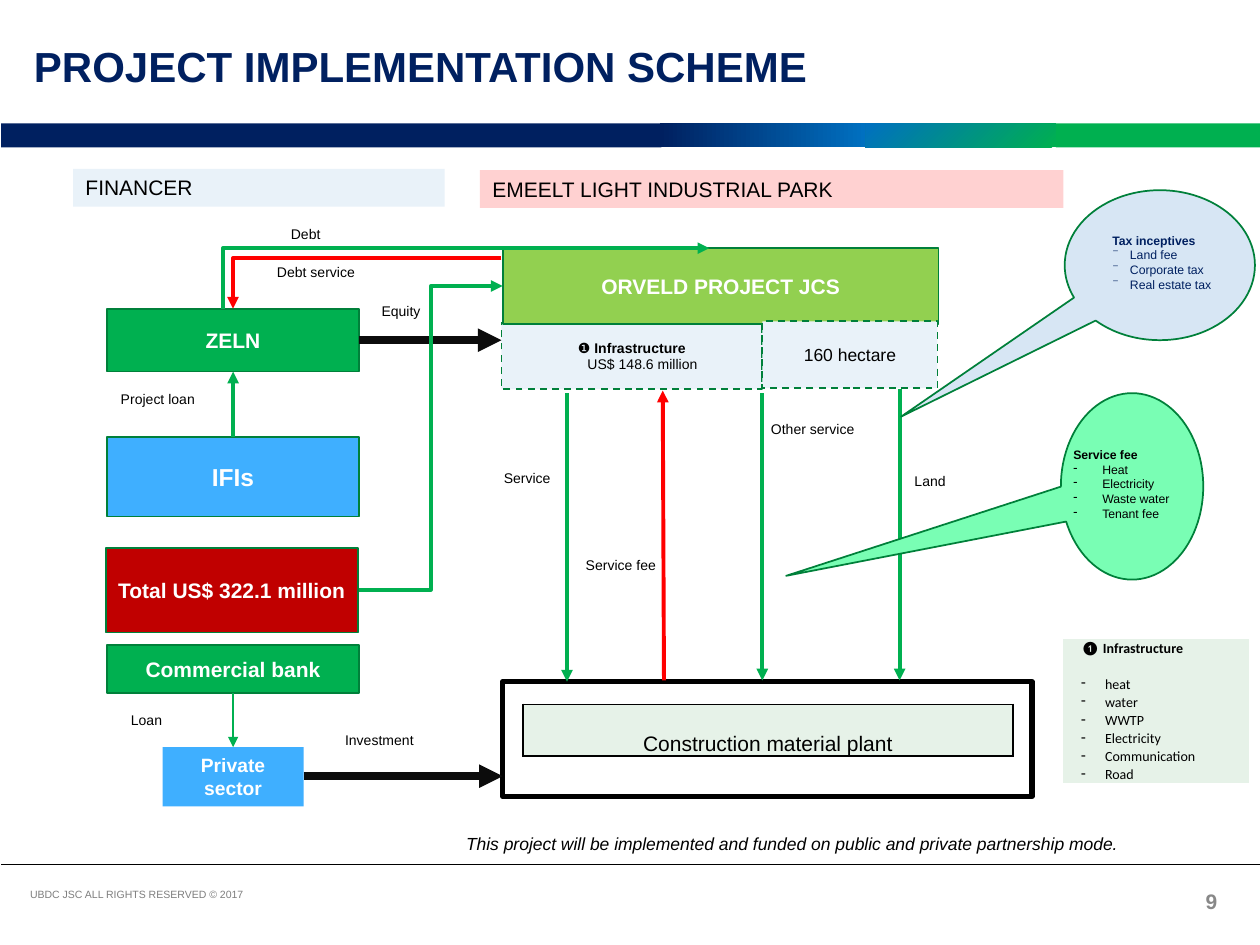
from lxml import etree
from pptx import Presentation
from pptx.dml.color import RGBColor
from pptx.enum.dml import MSO_LINE
from pptx.enum.shapes import MSO_CONNECTOR as LINK, MSO_SHAPE as FORM
from pptx.enum.text import MSO_ANCHOR as ANCHOR, PP_ALIGN as ALIGN
from pptx.oxml.ns import qn
from pptx.util import Inches, Pt

# The slide is a grid of 100 columns by 75 rows; all lengths count its cells.
COLUMNS, ROWS = 100, 75
CELL = Inches(10) / COLUMNS
NAVY, BLUE, GREEN, EDGE = "002060", "0070C0", "00B050", "00803A"
SKY, PALE, MINT, RED = "3FAFFF", "E9F2F9", "E6F2E8", "FF0000"
BLACK, WHITE, COAL = "000000", "FFFFFF", "0C0C0C"
NO_TABLE_STYLE = "{2D5ABB26-0587-4C30-8999-92F81FD0307C}"


def grid(*cells):
    return [round(cell * CELL) for cell in cells]


def color(value):
    return RGBColor.from_string(value)


def add_run(paragraph, text, size, ink=BLACK, bold=False, italic=False, font="Arial"):
    run = paragraph.add_run()
    run.text = text
    run.font.name, run.font.size = font, Pt(size)
    run.font.bold, run.font.italic = bold, italic
    run.font.color.rgb = color(ink)


def indent(paragraph, left, hanging=0):
    properties = paragraph._p.get_or_add_pPr()
    left, hanging = grid(left, hanging)
    properties.set("marL", str(left))
    properties.set("indent", str(-hanging))
    return properties


def add_bullet(paragraph, mark, width, ink):
    properties = indent(paragraph, width, width)
    bullet_color = etree.SubElement(properties, qn("a:buClr"))
    etree.SubElement(bullet_color, qn("a:srgbClr")).set("val", ink)
    etree.SubElement(properties, qn("a:buChar")).set("char", mark)


def write(shape, text, size, ink=BLACK, align=ALIGN.LEFT, anchor=ANCHOR.TOP, **style):
    frame = shape.text_frame
    frame.word_wrap, frame.vertical_anchor = True, anchor
    paragraph = frame.paragraphs[0]
    paragraph.alignment = align
    add_run(paragraph, text, size, ink, **style)
    return frame


def add_box(slide, place, fill=None, edge=None, weight=1, dash=False, form=FORM.RECTANGLE):
    shape = slide.shapes.add_shape(form, *grid(*place))
    shape.shadow.inherit = False
    if fill:
        shape.fill.solid()
        shape.fill.fore_color.rgb = color(fill)
    else:
        shape.fill.background()
    if edge:
        shape.line.color.rgb = color(edge)
        shape.line.width = Pt(weight)
        if dash:
            shape.line.dash_style = MSO_LINE.DASH
    else:
        shape.line.fill.background()
    return shape


def add_party(slide, place, text, size, fill, edge=EDGE, anchor=ANCHOR.MIDDLE, form=FORM.RECTANGLE):
    shape = add_box(slide, place, fill, edge, form=form)
    write(shape, text, size, WHITE, ALIGN.CENTER, anchor, bold=True)


def add_gradient(slide, place, first, last, radial=False):
    shape = add_box(slide, place)
    shape.fill.gradient()
    shape.fill.gradient_angle = 0
    for stop, value, position in zip(shape.fill.gradient_stops, (first, last), (0, 1)):
        stop.color.rgb, stop.position = color(value), position
    if radial:
        linear = shape._element.spPr.find(".//" + qn("a:lin"))
        circle = etree.Element(qn("a:path"), {"path": "circle"})
        etree.SubElement(circle, qn("a:fillToRect"), {"r": "100000", "b": "100000"})
        linear.getparent().replace(linear, circle)


def add_text(slide, place, text, size, ink=BLACK, **style):
    return write(slide.shapes.add_textbox(*grid(*place)), text, size, ink, **style)


def add_bullet_list(slide, place, heading, items, mark, width, ink):
    frame = add_text(slide, place, heading, 7, ink, bold=True)
    for item in items:
        paragraph = frame.add_paragraph()
        add_bullet(paragraph, mark, width, ink)
        add_run(paragraph, item, 7, ink)


def add_link(slide, start, end, ink, weight=2.25, kind=LINK.STRAIGHT, bend=None, head=True):
    """Bend is the share of the width where an elbow turns; 1 makes a single corner."""
    link = slide.shapes.add_connector(kind, *grid(*start, *end))
    link.line.color.rgb, link.line.width = color(ink), Pt(weight)
    properties = link._element.spPr
    etree.SubElement(properties, qn("a:effectLst"))
    if head:
        etree.SubElement(link.line._get_or_add_ln(), qn("a:tailEnd")).set("type", "triangle")
    if bend is not None:
        geometry = properties.find(qn("a:prstGeom"))
        if bend == 1:
            geometry.set("prst", "bentConnector2")
        else:
            guides = geometry.find(qn("a:avLst"))
            if guides is None:
                guides = etree.SubElement(geometry, qn("a:avLst"))
            etree.SubElement(guides, qn("a:gd"), {"name": "adj1", "fmla": f"val {round(bend * 100000)}"})


def add_callout(slide, place, fill, tip):
    shape = add_box(slide, place, fill, EDGE, form=FORM.OVAL_CALLOUT)
    shape.adjustments[0], shape.adjustments[1] = tip


def add_column_table(slide, place, count):
    """Add a one-column table and return its cells."""
    frame = slide.shapes.add_table(count, 1, *grid(*place))
    table = frame.table
    table.first_row = table.horz_banding = False
    table._tbl.tblPr.find(qn("a:tableStyleId")).text = NO_TABLE_STYLE
    cells = list(table.iter_cells())
    for cell in cells:
        cell.fill.solid()
        cell.fill.fore_color.rgb = color(MINT)
        cell.vertical_anchor = ANCHOR.BOTTOM
        cell.margin_left, cell.margin_top, cell.margin_right, cell.margin_bottom = grid(0.1, 0.1, 0.1, 0)
    return cells


def add_border(cell, ink):
    properties = cell._tc.get_or_add_tcPr()
    for index, side in enumerate(("lnL", "lnR", "lnT", "lnB")):
        line = etree.Element(qn("a:" + side), {"w": str(Pt(1))})
        fill = etree.SubElement(line, qn("a:solidFill"))
        etree.SubElement(fill, qn("a:srgbClr")).set("val", ink)
        properties.insert(index, line)


def add_frame(slide):
    add_gradient(slide, (52.4, 9.8, 16.3, 1.9), NAVY, BLUE)
    add_box(slide, (0.1, 9.8, 52.4, 1.9), NAVY)
    add_box(slide, (83.8, 9.8, 16.2, 1.9), GREEN)
    add_gradient(slide, (68.7, 9.8, 15.1, 1.9), BLUE, GREEN, radial=True)
    add_link(slide, (0.1, 68.6), (COLUMNS, 68.6), BLACK, 0.75, head=False)
    add_text(slide, (1.4, 70, 45.9, 2), "UBDC JSC ALL RIGHTS RESERVED © 2017", 6, "7F7F7F")
    title = add_text(slide, (2.7, 3.2, 90, 4), "PROJECT IMPLEMENTATION SCHEME", 24, NAVY, bold=True)
    title.margin_left = title.margin_top = title.margin_right = title.margin_bottom = 0
    add_text(slide, (75.1, 69.5, 22.5, 4), "9", 12, "888888", align=ALIGN.RIGHT,
             anchor=ANCHOR.MIDDLE, bold=True)
    add_text(slide, (36, 65.6, 59.5, 2.8), "This project will be implemented and funded on "
             "public and private partnership mode.", 10, italic=True)


def add_parties(slide):
    write(add_box(slide, (5.8, 13.4, 29.5, 3)), "FINANCER", 12)
    slide.shapes[-1].fill.solid()
    slide.shapes[-1].fill.fore_color.rgb = color(PALE)
    park = add_box(slide, (38.1, 13.5, 46.3, 3), RED)
    tint = park._element.spPr.find(".//" + qn("a:srgbClr"))
    etree.SubElement(tint, qn("a:alpha")).set("val", "18000")
    write(park, "EMEELT LIGHT INDUSTRIAL PARK", 12)

    infrastructure = add_box(slide, (39.8, 25.6, 20.7, 5.3), PALE, EDGE, dash=True)
    frame = write(infrastructure, "❶ ", 8, align=ALIGN.CENTER, anchor=ANCHOR.MIDDLE)
    add_run(frame.paragraphs[0], "Infrastructure", 8, bold=True)
    amount = frame.add_paragraph()
    amount.alignment = ALIGN.CENTER
    indent(amount, 1.7)
    add_run(amount, "US$ 148.6 million", 8)

    add_party(slide, (8.5, 24.5, 20, 5), "ZELN", 12, GREEN)
    add_party(slide, (39.9, 19.7, 34.6, 6), "ORVELD PROJECT JCS", 12, "92D050")
    area = add_box(slide, (60.5, 25.5, 13.9, 5.3), PALE, EDGE, dash=True)
    write(area, "160 hectare", 10, align=ALIGN.CENTER, anchor=ANCHOR.MIDDLE)
    add_party(slide, (8.5, 34.7, 20, 6.3), "IFIs", 14, SKY)
    add_party(slide, (8.4, 43.5, 20, 6.7), "Total US$ 322.1 million", 12, "C00000")
    add_party(slide, (8.5, 51.2, 20, 3.8), "Commercial bank", 12, GREEN, form=FORM.FLOWCHART_PROCESS)
    add_party(slide, (12.9, 59.3, 11.2, 4.7), "Private sector", 11, SKY, None, ANCHOR.TOP)

    plant, = add_column_table(slide, (41.5, 55.9, 38.9, 4.1), 1)
    add_border(plant, BLACK)
    plant.text_frame.paragraphs[0].alignment = ALIGN.CENTER
    add_run(plant.text_frame.paragraphs[0], "Construction material plant", 12)
    add_box(slide, (39.9, 54.1, 42, 9.1), None, BLACK, 3, form=FORM.FLOWCHART_PROCESS)


def add_flows(slide):
    for start, end, ink, weight in (
            ((18.5, 34.7), (18.5, 29.5), GREEN, 2.25), ((52.7, 54), (52.6, 31), RED, 2.25),
            ((24.1, 61.6), (39.9, 61.6), COAL, 4.5), ((28.5, 27), (39.8, 27), COAL, 4.5),
            ((45, 31.2), (45, 54.1), GREEN, 2.25), ((60.5, 31.2), (60.5, 54), GREEN, 2.25),
            ((71.4, 30.9), (71.4, 54), GREEN, 2.25), ((18.5, 55), (18.5, 59.3), GREEN, 0.75)):
        add_link(slide, start, end, ink, weight)
    for start, end, ink, bend in (
            ((17.7, 24.5), (56.3, 19.7), GREEN, 0), ((28.5, 46.8), (39.9, 22.7), GREEN, 0.5),
            ((39.8, 20.5), (18.5, 24.5), RED, 1)):
        add_link(slide, start, end, ink, kind=LINK.ELBOW, bend=bend)
    for left, top, width, text in (
            (22.1, 17.4, 20.8, "Debt"), (21, 20.4, 11, "Debt service"), (29.3, 23.5, 10.3, "Equity"),
            (8.6, 30.5, 9.5, "Project loan"), (9.4, 56, 8.5, "Loan"), (26.4, 57.6, 11.4, "Investment"),
            (39, 36.8, 8, "Service"), (45.5, 43.7, 8.2, "Service fee"),
            (60.2, 32.9, 11, "Other service"), (71.6, 37, 8.6, "Land")):
        add_text(slide, (left, top, width, 2.4), text, 8)


def add_details(slide):
    add_callout(slide, (84.5, 15.1, 15.1, 11.9), "D7E6F4", (-1.36, 1.01))
    add_bullet_list(slide, (87.3, 18, 15.7, 5.7), "Tax inceptives",
                    ("Land fee", "Corporate tax", "Real estate tax"), "⁻", 1.4, NAVY)
    add_callout(slide, (84.2, 31.2, 11.3, 14.8), "79FEB4", (-2.43, 0.48))
    add_bullet_list(slide, (84.2, 35, 16.3, 6.9), "Service fee",
                    ("Heat", "Electricity", "Waste water", "Tenant fee"), "-", 2.3, BLACK)

    items = ("heat", "water", "WWTP", "Electricity", "Communication", "Road")
    heading, gap, *rows = add_column_table(slide, (84.4, 50.7, 14.7, 11.3), len(items) + 2)
    for cell in (heading, *rows):
        cell.margin_left, = grid(1.4)
    paragraph = heading.text_frame.paragraphs[0]
    add_run(paragraph, "❶ ", 8, font="Calibri")
    add_run(paragraph, "Infrastructure", 8, bold=True, font="Calibri")
    gap.text_frame.paragraphs[0].font.size = Pt(8)
    for cell, item in zip(rows, items):
        paragraph = cell.text_frame.paragraphs[0]
        add_bullet(paragraph, "-", 1.9, BLACK)
        add_run(paragraph, item, 8, font="Calibri")


def main():
    presentation = Presentation()
    presentation.slide_width, presentation.slide_height = grid(COLUMNS, ROWS)
    slide = presentation.slides.add_slide(presentation.slide_layouts[6])
    add_frame(slide)
    add_parties(slide)
    add_flows(slide)
    add_details(slide)
    presentation.save("out.pptx")


if __name__ == "__main__":
    main()
